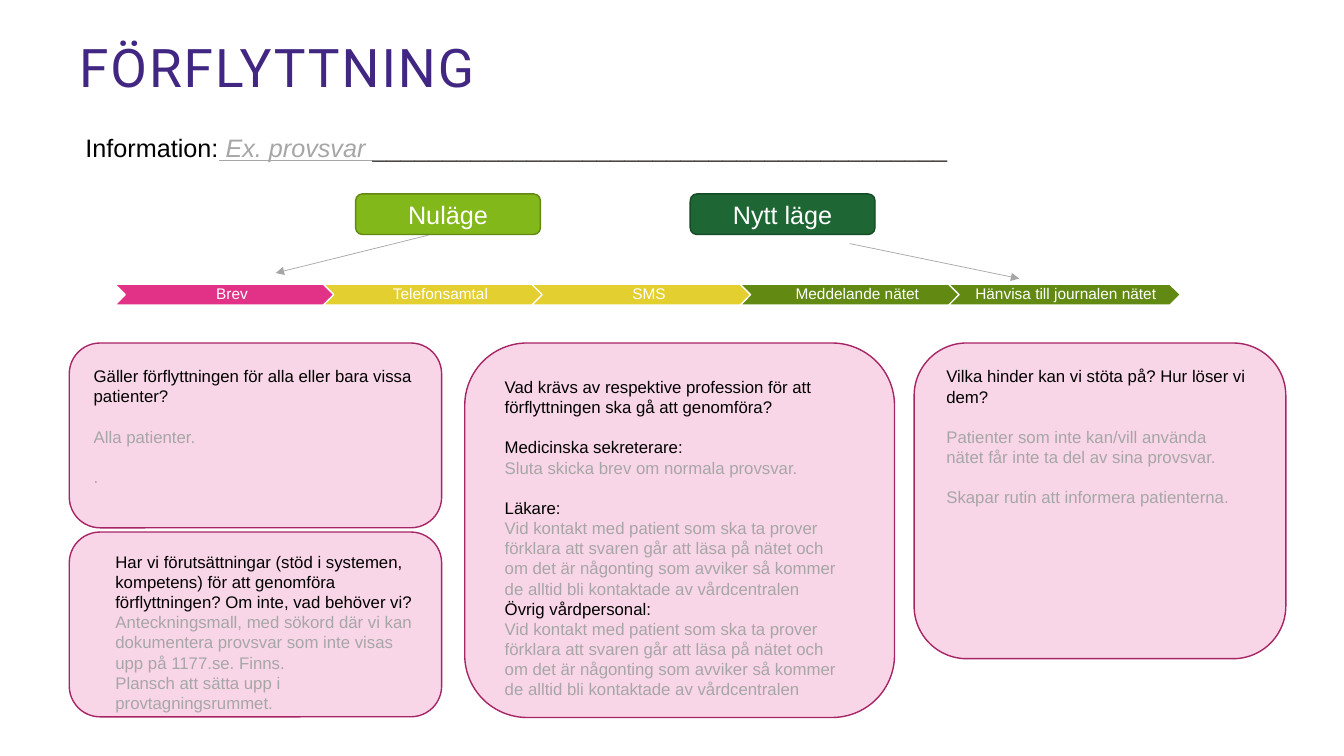
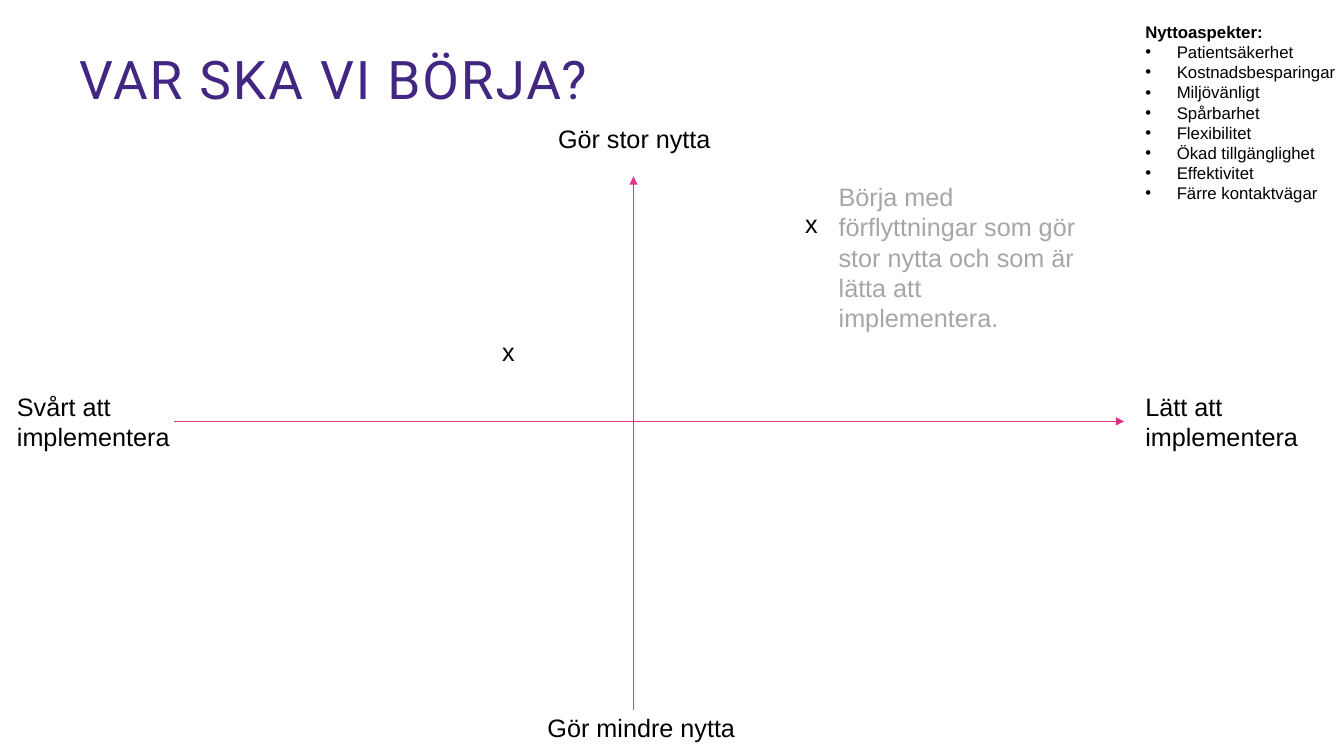
from pptx import Presentation
from pptx.util import Pt
from pptx.dml.color import RGBColor
from pptx.enum.shapes import MSO_SHAPE as Preset, MSO_CONNECTOR as Connector
from pptx.enum.text import PP_ALIGN as Align, MSO_ANCHOR as Anchor
from pptx.oxml.ns import qn
from lxml import etree

COLOURS = {
    "title": "412682", "black": "000000", "white": "FFFFFF",
    "grey": "A6A6A6", "rule": "4D4848",
    "pink": "E13288", "yellow": "E4CF30", "olive": "628A13",
    "lime": "83B81A", "lime edge": "618813",
    "forest": "1E6633", "forest edge": "164B26",
    "card": "F9D6E7", "card edge": "A62565",
}
colour = {name: RGBColor.from_string(code) for name, code in COLOURS.items()}


def write(shape, text, size=18, ink="black", font="Arial", bold=False, italic=False,
          underline=False, tracking=0, align=Align.LEFT, gap=0, bullet=False, join=False):
    """Add text to a shape as a new paragraph, or to its last one if join is set."""
    frame = shape.text_frame
    frame.word_wrap = True
    para = frame.paragraphs[-1]
    if para.runs and not join:
        para = frame.add_paragraph()
    if not join:
        para.alignment = align
    if gap:
        para.space_before = Pt(gap)
    if bullet:
        props = para._p.get_or_add_pPr()
        props.set("marL", str(Pt(22.5)))
        props.set("indent", str(-Pt(22.5)))
        etree.SubElement(props, qn("a:buFont")).set("typeface", "Arial")
        etree.SubElement(props, qn("a:buChar")).set("char", "•")
    span = para.add_run()
    span.text = text
    span.font.size = Pt(size)
    span.font.name = font
    span.font.bold = bold
    span.font.italic = italic
    span.font.underline = underline
    span.font.color.rgb = colour[ink]
    if tracking:
        span._r.get_or_add_rPr().set("spc", str(round(tracking * 100)))
    return para


def add_figure(page, preset, place, fill=None, edge=None):
    """Add a filled shape, or an arrow from (x, y) to (x, y) if preset is a connector."""
    place = [Pt(length) for length in place]
    if preset == Connector.STRAIGHT:
        figure = page.shapes.add_connector(preset, *place)
        etree.SubElement(figure.line._get_or_add_ln(), qn("a:tailEnd")).set("type", "triangle")
        etree.SubElement(figure._element.spPr, qn("a:effectLst"))
        figure.line.width = Pt(0.5)
    else:
        figure = page.shapes.add_shape(preset, *place)
        figure.shadow.inherit = False
        figure.fill.solid()
        figure.fill.fore_color.rgb = colour[fill]
        figure.line.width = Pt(1)
    figure.line.color.rgb = colour[edge]
    return figure


deck = Presentation()
deck.slide_width, deck.slide_height = Pt(960), Pt(540)

# Pages with their titles
pages = []
for title, height in [("FÖRFLYTTNING", 55.5), ("VAR SKA VI BÖRJA?", 64)]:
    page = deck.slides.add_slide(deck.slide_layouts[6])
    box = page.shapes.add_textbox(Pt(49.5), Pt(18), Pt(762), Pt(height))
    box.text_frame.vertical_anchor = Anchor.BOTTOM
    write(box, title, size=38, ink="title", font="Roboto", tracking=1.4)
    pages.append(page)
move_page, start_page = pages

# Information line
box = move_page.shapes.add_textbox(Pt(54), Pt(91), Pt(737), Pt(29))
write(box, "Information:")
write(box, " Ex. provsvar ", ink="grey", italic=True, underline=True, join=True)
write(box, "_" * 41, ink="rule", join=True)

# Chevron chain of channels
channels = [("Brev", "pink"), ("Telefonsamtal", "yellow"), ("SMS", "yellow"),
            ("Meddelande nätet", "olive"), ("Hänvisa till journalen nätet", "olive")]
for index, (name, fill) in enumerate(channels):
    step = add_figure(move_page, Preset.CHEVRON, (82 + 148.9 * index, 203, 165.6, 15), fill, "white")
    frame = step.text_frame
    frame.margin_left = Pt(3.5)
    frame.margin_top = frame.margin_right = frame.margin_bottom = Pt(1.5)
    frame.vertical_anchor = Anchor.MIDDLE
    write(step, name, size=11, ink="white", align=Align.CENTER).line_spacing = 0.9

# Current and new state
for left, name, fill in [(254, "Nuläge", "lime"), (493, "Nytt läge", "forest")]:
    state = add_figure(move_page, Preset.ROUNDED_RECTANGLE, (left, 138.5, 132, 29), fill, fill + " edge")
    state.text_frame.vertical_anchor = Anchor.MIDDLE
    write(state, name, ink="white", align=Align.CENTER)
for ends in [(306, 168, 197, 195), (607, 174, 728, 199)]:
    add_figure(move_page, Connector.STRAIGHT, ends, edge="grey")

# Question cards: place, margins (left, top, right), paragraphs (text, ink, gap)
LINE_GAP = 14.4
CONTACT = ("Vid kontakt med patient som ska ta prover förklara att svaren går att läsa på nätet "
           "och om det är någonting som avviker så kommer de alltid bli kontaktade av vårdcentralen")
cards = [
    ((49.5, 245, 266, 132), (11, 10, 0), [
        ("Gäller förflyttningen för alla eller bara vissa patienter?", "black", 0),
        ("Alla patienter.", "grey", LINE_GAP),
        (".", "grey", LINE_GAP)]),
    ((49.5, 380, 266, 132), (26.5, 7.5, 10), [
        ("Har vi förutsättningar (stöd i systemen, kompetens) för att genomföra "
         "förflyttningen? Om inte, vad behöver vi?", "black", 0),
        ("Anteckningsmall, med sökord där vi kan dokumentera provsvar som inte visas "
         "upp på 1177.se. Finns.", "grey", 0),
        ("Plansch att sätta upp i provtagningsrummet.", "grey", 0)]),
    ((332, 245, 307, 267.5), (15.5, 11, 26), [
        ("Vad krävs av respektive profession för att förflyttningen ska gå att genomföra?", "black", 0),
        ("Medicinska sekreterare:", "black", LINE_GAP),
        ("Sluta skicka brev om normala provsvar.", "grey", 0),
        ("Läkare:", "black", LINE_GAP),
        (CONTACT, "grey", 0),
        ("Övrig vårdpersonal:", "black", 0),
        (CONTACT, "grey", 0)]),
    ((653, 245, 265.5, 225.5), (12, 5.5, 15.5), [
        ("Vilka hinder kan vi stöta på? Hur löser vi dem?", "black", 0),
        ("Patienter som inte kan/vill använda nätet får inte ta del av sina provsvar.", "grey", LINE_GAP),
        ("Skapar rutin att informera patienterna.", "grey", LINE_GAP)]),
]
for place, margins, paragraphs in cards:
    card = add_figure(move_page, Preset.ROUNDED_RECTANGLE, place, "card", "card edge")
    frame = card.text_frame
    frame.vertical_anchor = Anchor.TOP
    frame.margin_left, frame.margin_top, frame.margin_right = [Pt(margin) for margin in margins]
    frame.margin_bottom = 0
    for text, ink, gap in paragraphs:
        write(card, text, size=12, ink=ink, gap=gap)

# Axes of benefit and ease
for ends in [(452.5, 507.5, 452.5, 126), (124.5, 301, 803, 301)]:
    add_figure(start_page, Connector.STRAIGHT, ends, edge="pink")

# Axis labels, marks and advice
labels = [
    ("Gör stor nytta", (391.5, 84.5, 137, 29), "black"),
    ("Gör mindre nytta", (384, 505.5, 152, 29), "black"),
    ("Lätt att implementera", (811, 276, 137, 51), "black"),
    ("Svårt att implementera", (5, 276, 137, 51), "black"),
    ("x", (568, 145, 44, 29), "black"),
    ("x", (351.5, 237, 40, 29), "black"),
    ("Börja med förflyttningar som gör stor nytta och som är lätta att implementera.",
     (592, 126, 185, 117), "grey"),
]
for text, place, ink in labels:
    write(start_page.shapes.add_textbox(*[Pt(length) for length in place]), text, ink=ink)

# Benefit aspects
box = start_page.shapes.add_textbox(Pt(811), Pt(12), Pt(155), Pt(160))
write(box, "Nyttoaspekter:", size=12, bold=True)
for aspect in ["Patientsäkerhet", "Kostnadsbesparingar", "Miljövänligt", "Spårbarhet", "Flexibilitet",
               "Ökad tillgänglighet", "Effektivitet", "Färre kontaktvägar"]:
    write(box, aspect, size=12, bullet=True)

deck.save("out.pptx")
